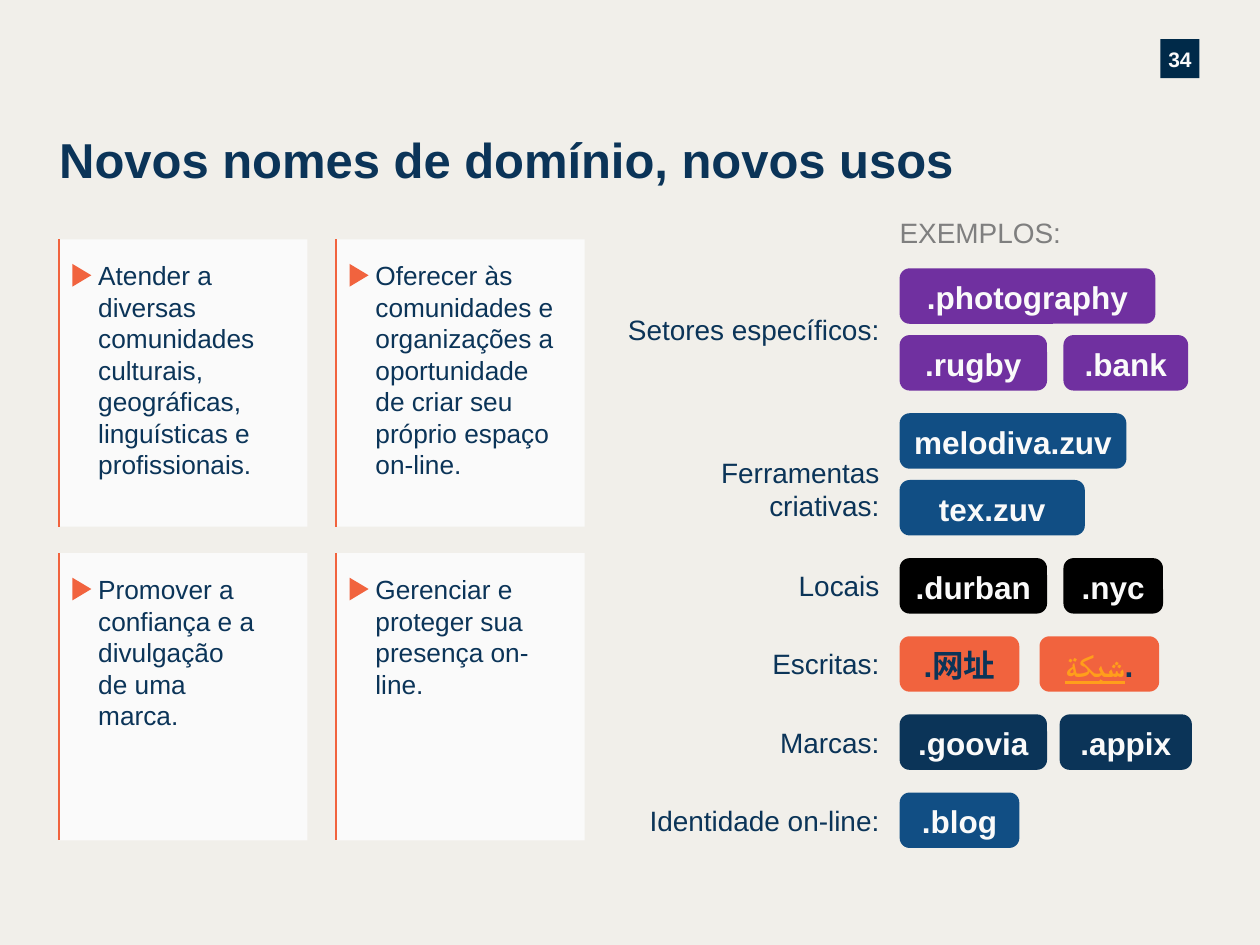
from dataclasses import dataclass
from typing import NamedTuple

from lxml import etree
from pptx import Presentation
from pptx.dml.color import RGBColor
from pptx.enum.shapes import MSO_CONNECTOR, MSO_SHAPE
from pptx.enum.text import MSO_ANCHOR, MSO_AUTO_SIZE, PP_ALIGN
from pptx.oxml.ns import qn
from pptx.util import Inches, Pt

RECTANGLE = MSO_SHAPE.RECTANGLE
ROUNDED = MSO_SHAPE.ROUNDED_RECTANGLE
TRIANGLE = MSO_SHAPE.ISOSCELES_TRIANGLE
STRAIGHT = MSO_CONNECTOR.STRAIGHT
TOP, MIDDLE = MSO_ANCHOR.TOP, MSO_ANCHOR.MIDDLE
LEFT, CENTER, RIGHT = PP_ALIGN.LEFT, PP_ALIGN.CENTER, PP_ALIGN.RIGHT
NO_FIT = MSO_AUTO_SIZE.NONE


@dataclass(frozen=True)
class Theme:
    """Colours and type sizes of the slide."""
    font: str = "Arial"
    background: str = "F1EFEA"
    paper: str = "FAFAFA"
    navy: str = "0B3458"
    badge: str = "002A49"
    blue: str = "114E84"
    purple: str = "7030A0"
    black: str = "000000"
    orange: str = "F1633E"
    amber: str = "FF9E1B"
    gray: str = "7F7F7F"
    title_size: int = 28
    pill_size: int = 18
    label_size: int = 16
    card_size: int = 15
    badge_size: int = 12


class Box(NamedTuple):
    """A rectangle in inches."""
    left: float
    top: float
    width: float
    height: float

    def lengths(self):
        """Return the four sides as slide lengths."""
        return [Inches(value) for value in self]


class Pill(NamedTuple):
    """A rounded name tag, placed from the left edge of its row."""
    runs: list
    offset: float
    width: float


class Group(NamedTuple):
    """A label with one or more rows of pills."""
    label: str
    fill: str
    rows: list
    label_width: float = 2.34
    label_lines: int = 1
    label_shift: float = 0


THEME = Theme()
PILL_HEIGHT, ROW_PITCH, GROUP_PITCH = 0.44, 0.53, 0.62
LABEL_LINE = 0.27
CARD_WIDTH, CARD_HEIGHT = 1.97, 2.28
CARD_PITCH_X, CARD_PITCH_Y = 2.2, 2.49

CARDS = [
    (["Atender a diversas", "comunidades culturais,",
      "geográficas, linguísticas e profissionais."], 0.24),
    (["Oferecer às comunidades e organizações a oportunidade de criar seu "
      "próprio espaço on-line."], 0.2),
    (["Promover a confiança e a divulgação de uma marca."], 0.39),
    (["Gerenciar e proteger sua presença on-line."], 0.2),
]


def name_pill(text, offset, width):
    """Return a pill with a single light name."""
    return Pill([(text, {"color": THEME.paper})], offset, width)


GROUPS = [
    Group("Setores específicos:", THEME.purple, [
        [name_pill(".photography", 0, 2.03)],
        [name_pill(".rugby", 0, 1.17), name_pill(".bank", 1.3, 0.99)]]),
    Group("Ferramentas criativas:", THEME.blue, [
        [name_pill("melodiva.zuv", 0, 1.8)],
        [name_pill("tex.zuv", 0, 1.47)]], 2.04, 2, 0.12),
    Group("Locais", THEME.black, [
        [name_pill(".durban", 0, 1.17), name_pill(".nyc", 1.3, 0.79)]]),
    Group("Escritas:", THEME.orange, [[
        Pill([(".网址", {"color": THEME.navy})], 0, 0.95),
        Pill([("شبكة", {"color": THEME.amber, "underline": True}),
              (".", {"color": THEME.navy})], 1.11, 0.95)]]),
    Group("Marcas:", THEME.navy, [
        [name_pill(".goovia", 0, 1.17), name_pill(".appix", 1.27, 1.05)]]),
    Group("Identidade on-line:", THEME.blue, [[name_pill(".blog", 0, 0.95)]]),
]


def apply_format(target, values):
    """Set each named attribute on the target."""
    for name, value in values.items():
        setattr(target, name, value)


def write_text(shape, paragraphs, size, bold=False, align=LEFT, anchor=TOP,
               insets=(0, 0, 0, 0), spacing=None):
    """Fill a shape with paragraphs made of (text, format) runs."""
    frame = shape.text_frame
    sides = ("margin_left", "margin_top", "margin_right", "margin_bottom")
    apply_format(frame, {"word_wrap": True, "auto_size": NO_FIT, "vertical_anchor": anchor})
    apply_format(frame, {side: Inches(inset) for side, inset in zip(sides, insets)})
    for index, runs in enumerate(paragraphs):
        paragraph = frame.add_paragraph() if index else frame.paragraphs[0]
        apply_format(paragraph, {"alignment": align, "line_spacing": spacing})
        for text, style in runs:
            run = paragraph.add_run()
            run.text = text
            apply_format(run.font, {"name": THEME.font, "size": Pt(size), "bold": bold,
                                    "underline": style.get("underline", False)})
            run.font.color.rgb = RGBColor.from_string(style.get("color", THEME.navy))


def add_block(slide, kind, box, fill):
    """Add a flat filled shape without outline."""
    shape = slide.shapes.add_shape(kind, *box.lengths())
    shape.shadow.inherit = False
    shape.fill.solid()
    shape.fill.fore_color.rgb = RGBColor.from_string(fill)
    shape.line.fill.background()
    return shape


def add_label(slide, box, text, color=THEME.navy, align=RIGHT):
    """Add a plain text label."""
    label = slide.shapes.add_textbox(*box.lengths())
    write_text(label, [[(text, {"color": color})]], THEME.label_size, align=align)


def add_title(slide, box, text):
    """Place and fill the title placeholder."""
    title = slide.shapes.title
    apply_format(title, dict(zip(("left", "top", "width", "height"), box.lengths())))
    write_text(title, [[(text, {})]], THEME.title_size, bold=True, anchor=MIDDLE)


def add_page_badge(slide, box, number):
    """Add the page number square."""
    badge = add_block(slide, RECTANGLE, box, THEME.badge)
    write_text(badge, [[(number, {"color": THEME.paper})]], THEME.badge_size,
               bold=True, align=CENTER, anchor=MIDDLE, spacing=1.08)


def add_card(slide, box, paragraphs, right_inset):
    """Add a card with an accent edge and a triangle marker."""
    card = add_block(slide, RECTANGLE, box, THEME.paper)
    write_text(card, [[(text, {})] for text in paragraphs], THEME.card_size,
               insets=(0.31, 0.16, right_inset, 0.2), spacing=Pt(18))
    marker_box = Box(box.left + 0.09, box.top + 0.21, 0.18, 0.15)
    add_block(slide, TRIANGLE, marker_box, THEME.orange).rotation = 90
    left, top, _, height = box.lengths()
    edge = slide.shapes.add_connector(STRAIGHT, left, top, left, top + height)
    edge.line.color.rgb = RGBColor.from_string(THEME.orange)
    edge.line.width = Pt(1.25)
    etree.SubElement(edge._element.spPr, qn("a:effectLst"))


def add_card_grid(slide, box):
    """Lay the cards out in two columns."""
    for index, (paragraphs, right_inset) in enumerate(CARDS):
        row, column = divmod(index, 2)
        card_box = Box(box.left + column * CARD_PITCH_X, box.top + row * CARD_PITCH_Y,
                       CARD_WIDTH, CARD_HEIGHT)
        add_card(slide, card_box, paragraphs, right_inset)


def add_pill(slide, box, pill, fill):
    """Add one rounded name tag."""
    shape = add_block(slide, ROUNDED, box, fill)
    shape.adjustments[0] = 0.18
    write_text(shape, [pill.runs], THEME.pill_size, bold=True, align=CENTER,
               anchor=MIDDLE, spacing=1.06)


def add_examples(slide, box):
    """Stack the labelled groups of pills under their heading."""
    pill_left, label_right = box.left + 2.5, box.left + 2.34
    heading = Box(pill_left, box.top, 2.46, LABEL_LINE)
    add_label(slide, heading, "EXEMPLOS:", THEME.gray, LEFT)
    top = box.top + 0.42
    for group in GROUPS:
        extra = (len(group.rows) - 1) * ROW_PITCH
        height = group.label_lines * LABEL_LINE
        label_top = top + (extra + PILL_HEIGHT - height) / 2 + group.label_shift
        add_label(slide, Box(label_right - group.label_width, label_top,
                             group.label_width, height), group.label)
        for index, row in enumerate(group.rows):
            for pill in row:
                pill_box = Box(pill_left + pill.offset, top + index * ROW_PITCH,
                               pill.width, PILL_HEIGHT)
                add_pill(slide, pill_box, pill, group.fill)
        top += extra + GROUP_PITCH


def main():
    """Build and save the slide."""
    presentation = Presentation()
    apply_format(presentation, {"slide_width": Inches(10), "slide_height": Inches(7.5)})
    slide = presentation.slides.add_slide(presentation.slide_layouts.get_by_name("Title Only"))
    slide.background.fill.solid()
    slide.background.fill.fore_color.rgb = RGBColor.from_string(THEME.background)
    add_page_badge(slide, Box(9.21, 0.31, 0.31, 0.31), "34")
    add_title(slide, Box(0.47, 0.98, 7.29, 0.56), "Novos nomes de domínio, novos usos")
    add_card_grid(slide, Box(0.47, 1.9, 4.17, 4.77))
    add_examples(slide, Box(4.64, 1.71, 4.96, 5.02))
    presentation.save("out.pptx")


if __name__ == "__main__":
    main()
